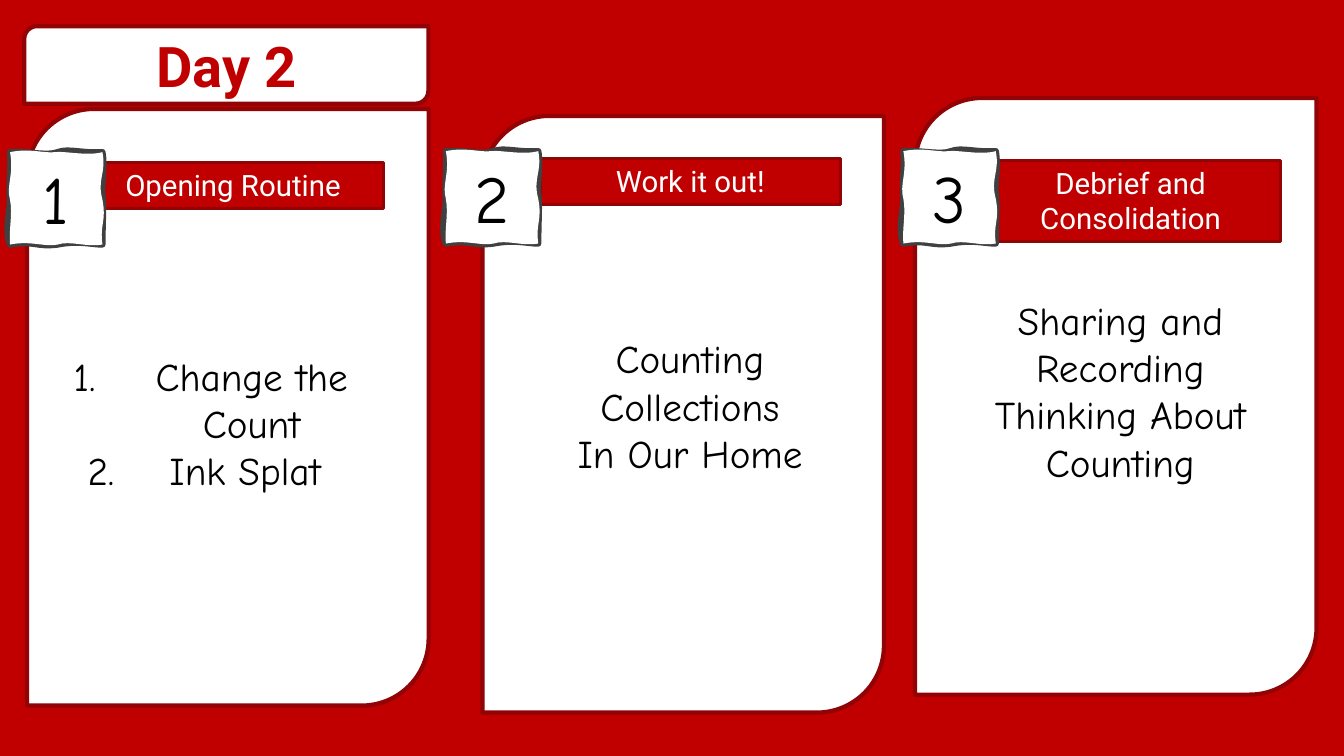
from lxml import etree
from pptx import Presentation
from pptx.dml.color import RGBColor
from pptx.enum.shapes import MSO_SHAPE as Shape
from pptx.enum.text import MSO_ANCHOR as Anchor, MSO_AUTO_SIZE as AutoSize, PP_ALIGN as Align
from pptx.oxml.ns import qn
from pptx.util import Pt

RED = RGBColor(0xC0, 0x00, 0x00)
DARK_RED = RGBColor(0x92, 0x03, 0x05)
WHITE = RGBColor(0xFF, 0xFF, 0xFF)
BLACK = RGBColor(0x00, 0x00, 0x00)
GREY = RGBColor(0x40, 0x40, 0x40)
HEADING_FONT = "Roboto"
BODY_FONT = "Comic Neue"

# Hand-drawn square: Bezier segments (two controls, one end) from its top left, in points
TILE_SIDE = 66
TILE_EDGE = [
    [(10, -1), (27, 3), (34, 0)], [(42, -3), (51, 1), (66, 0)],
    [(68, 11), (65, 24), (66, 31)], [(67, 38), (66, 50), (66, 66)],
    [(58, 66), (49, 63), (34, 66)], [(19, 68), (17, 63), (0, 66)],
    [(-4, 57), (0, 41), (0, 34)], [(-1, 27), (1, 7), (0, 0)],
]
TILE_FACE = [
    [(14, -3), (25, 1), (32, 0)], [(39, -1), (55, 3), (66, 0)],
    [(69, 15), (62, 19), (66, 34)], [(69, 50), (64, 51), (66, 66)],
    [(54, 68), (43, 63), (34, 66)], [(25, 68), (15, 63), (0, 66)],
    [(-1, 55), (2, 45), (0, 34)], [(-3, 24), (3, 16), (0, 0)],
]

# Panel corner, banner (left, top, height) and tile corner of each section
SECTIONS = [
    ("Opening Routine", (19.4, 77.8), (59.2, 116, 33), (7.2, 108.7)),
    ("Work it out!", (344.6, 82.8), (385.8, 113, 33), (318.5, 108)),
    ("Debrief and Consolidation", (653.6, 70), (700.3, 114.5, 58.2), (645.3, 108)),
]


def paint(shape, fill, line, width):
    shape.fill.solid()
    shape.fill.fore_color.rgb = fill
    shape.line.color.rgb = line
    shape.line.width = Pt(width)


def write(shape, lines, font, color, anchor=Anchor.TOP, bold=False):
    """Fill a shape with lines, each a list of (text, size) spans."""
    frame = shape.text_frame
    frame.word_wrap = True
    frame.auto_size = AutoSize.NONE
    frame.vertical_anchor = anchor
    for index, line in enumerate(lines):
        para = frame.add_paragraph() if index else frame.paragraphs[0]
        para.alignment = Align.CENTER
        for text, size in line:
            span = para.add_run()
            span.text = text
            span.font.name = font
            span.font.size = Pt(size)
            span.font.bold = bold
            span.font.color.rgb = color


def add_box(page, kind, left, top, width, height, fill, line_width):
    box = page.shapes.add_shape(kind, Pt(left), Pt(top), Pt(width), Pt(height))
    box.shadow.inherit = False
    paint(box, fill, DARK_RED, line_width)
    return box


def add_title(page, text):
    card = add_box(page, Shape.ROUND_2_DIAG_RECTANGLE, 17.3, 18.7, 288.7, 55.4, WHITE, 3)
    title = page.shapes.title
    title.left, title.top, title.width, title.height = card.left, card.top, card.width, card.height
    write(title, [[(text, 40)]], HEADING_FONT, RED, Anchor.MIDDLE, True)
    card.element.addnext(title.element)


def add_curve(paths, segments, **options):
    side = str(Pt(TILE_SIDE))
    outline = etree.SubElement(paths, qn("a:path"), w=side, h=side, **options)
    start = etree.SubElement(outline, qn("a:moveTo"))
    etree.SubElement(start, qn("a:pt"), x="0", y="0")
    for segment in segments:
        curve = etree.SubElement(outline, qn("a:cubicBezTo"))
        for x, y in segment:
            etree.SubElement(curve, qn("a:pt"), x=str(Pt(x)), y=str(Pt(y)))
    etree.SubElement(outline, qn("a:close"))


def add_tile(page, left, top, number):
    right, bottom = left + TILE_SIDE, top + TILE_SIDE
    builder = page.shapes.build_freeform(Pt(left), Pt(top), scale=1.0)
    builder.add_line_segments(
        [(Pt(right), Pt(top)), (Pt(right), Pt(bottom)), (Pt(left), Pt(bottom))], close=True)
    tile = builder.convert_to_shape()
    tile.shadow.inherit = False
    paint(tile, WHITE, GREY, 4.5)
    # Swap the straight sides for an unfilled edge and an unlined face
    paths = tile.element.spPr.find(qn("a:custGeom")).find(qn("a:pathLst"))
    for straight in list(paths):
        paths.remove(straight)
    add_curve(paths, TILE_EDGE, fill="none")
    add_curve(paths, TILE_FACE, stroke="0")
    write(tile, [[(str(number), 48)]], BODY_FONT, BLACK)


def add_body(page, left, top, width, height, lines):
    box = page.shapes.add_textbox(Pt(left), Pt(top), Pt(width), Pt(height))
    write(box, lines, BODY_FONT, BLACK, Anchor.MIDDLE)
    return box


def number_lines(box):
    for para in box.text_frame.paragraphs:
        props = para._p.get_or_add_pPr()
        props.set("marL", str(Pt(58.5)))
        props.set("indent", str(-Pt(58.5)))
        etree.SubElement(props, qn("a:buFont"), typeface=BODY_FONT)
        etree.SubElement(props, qn("a:buAutoNum"), type="arabicPeriod")


def main():
    deck = Presentation()
    deck.slide_width, deck.slide_height = Pt(960), Pt(540)
    page = deck.slides.add_slide(deck.slide_layouts[5])
    page.background.fill.solid()
    page.background.fill.fore_color.rgb = RED

    # Panels with banners and numbers
    for number, (heading, panel, (left, top, height), tile) in enumerate(SECTIONS, start=1):
        add_box(page, Shape.ROUND_2_DIAG_RECTANGLE, *panel, 286.8, 426.2, WHITE, 3)
        banner = add_box(page, Shape.RECTANGLE, left, top, 214.5, height, RED, 2.25)
        write(banner, [[(heading, 21)]], HEADING_FONT, WHITE)
        add_tile(page, *tile, number)

    add_title(page, "Day 2")

    # Activities
    routine = add_body(page, 19.5, 247.7, 262, 108.7,
                       [[("Change the Count", 28)], [("Ink Splat ", 28)]])
    number_lines(routine)
    add_body(page, 378, 230.4, 229.7, 113.8,
             [[("Counting", 28), (" ", 32), ("Collections", 28)], [("In Our Home", 28)]])
    add_body(page, 685.4, 207.4, 229.7, 143.5,
             [[("Sharing and Recording Thinking About Counting", 28)]])

    deck.save("out.pptx")


if __name__ == "__main__":
    main()
